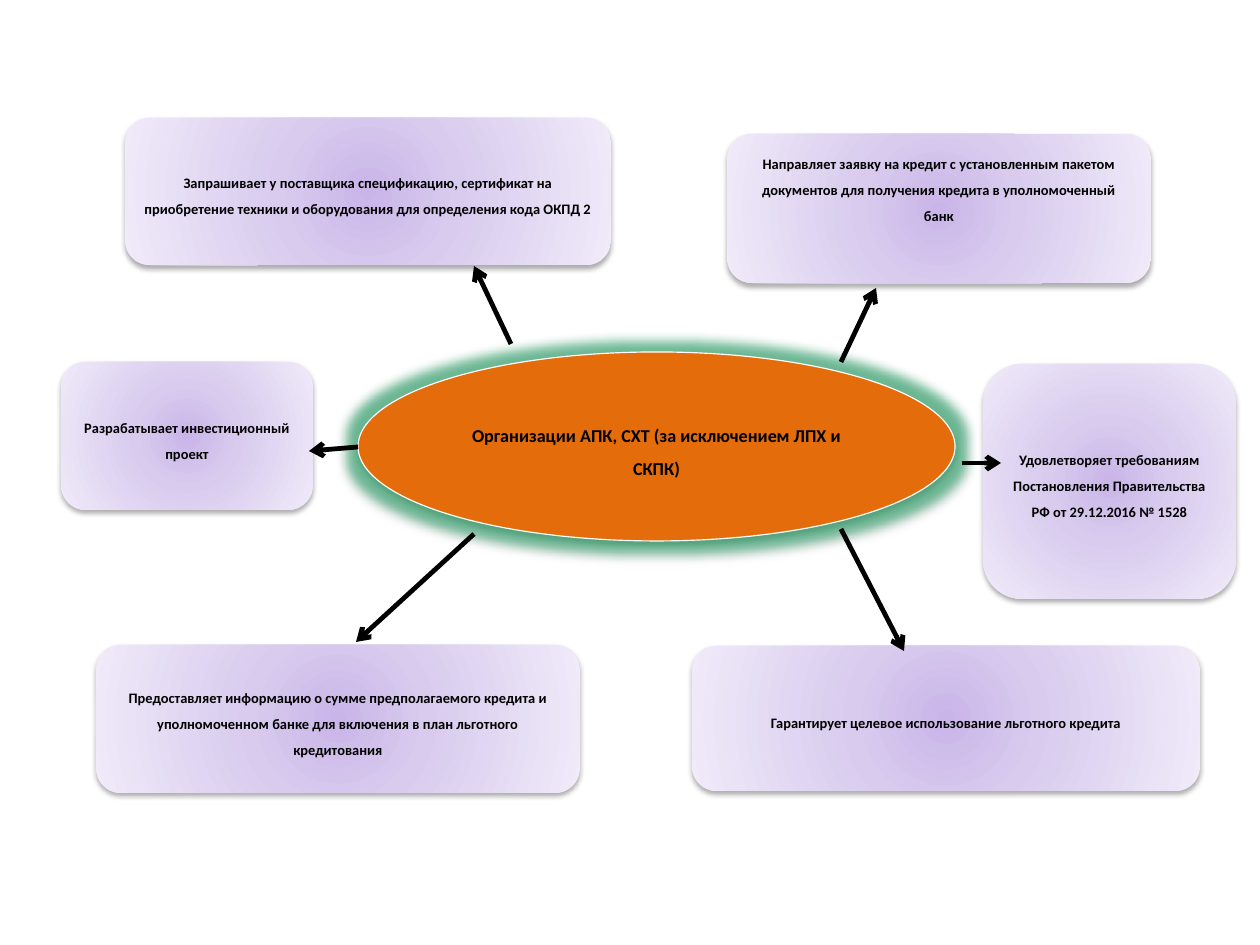
from lxml import etree
from pptx import Presentation
from pptx.dml.color import RGBColor
from pptx.enum.shapes import MSO_CONNECTOR, MSO_SHAPE
from pptx.enum.text import MSO_ANCHOR, PP_ALIGN
from pptx.oxml import parse_xml
from pptx.oxml.ns import qn
from pptx.util import Pt

ELLIPSE = MSO_SHAPE.OVAL
ROUNDED = MSO_SHAPE.ROUNDED_RECTANGLE
STRAIGHT = MSO_CONNECTOR.STRAIGHT
CENTER = PP_ALIGN.CENTER
TOP = MSO_ANCHOR.TOP
MIDDLE = MSO_ANCHOR.MIDDLE

EMU_PER_PX = 8000
EMU_PER_PT = 12700
FONT = "Calibri"
BLACK = "000000"
WHITE = "FFFFFF"
ORANGE = "E46C0A"
GREEN = "009650"
LILAC_STOPS = [(0, "C9B5E8"), (35, "D8CBEE"), (100, "F0EAF9")]

CENTRE_TEXT = "Организации АПК, СХТ (за исключением ЛПХ и СКПК)"
STEPS = [
    ("Запрашивает у поставщика спецификацию, сертификат на приобретение техники "
     "и оборудования для определения кода ОКПД 2", (125, 118, 486, 147), MIDDLE),
    ("Предоставляет информацию о сумме предполагаемого кредита и уполномоченном "
     "банке для включения в план льготного кредитования", (96, 645, 484, 148), MIDDLE),
    ("Гарантирует целевое использование льготного кредита",
     (692, 646, 508, 145), MIDDLE),
    ("Направляет заявку на кредит с установленным пакетом документов для "
     "получения кредита в уполномоченный банк", (727, 134, 424, 149), TOP),
    ("Разрабатывает инвестиционный проект", (61, 362, 252, 148), MIDDLE),
    ("Удовлетворяет требованиям Постановления Правительства РФ от 29.12.2016 № 1528",
     (983, 364, 253, 235), MIDDLE),
]
ARROWS = [
    ((474, 534), (356, 642)),
    ((841, 529), (904, 651)),
    ((358, 447), (309, 451)),
    ((962, 463), (1001, 463)),
    ((511, 344), (474, 266)),
    ((841, 362), (876, 288)),
]


def px(*lengths):
    return [length * EMU_PER_PX for length in lengths]


def rgb(value):
    return RGBColor.from_string(value)


def add_effect(shape, kind, color, alpha, **attributes):
    effects = shape._element.spPr.find(qn("a:effectLst"))
    effect = etree.SubElement(effects, qn(f"a:{kind}"))
    for name, value in attributes.items():
        effect.set(name, str(value))
    tint = etree.SubElement(effect, qn("a:srgbClr"), val=color)
    etree.SubElement(tint, qn("a:alpha"), val=str(alpha * 1000))


def add_drop_shadow(shape):
    add_effect(shape, "outerShdw", BLACK, 32, blurRad=int(3.5 * EMU_PER_PT),
               dist=int(2.2 * EMU_PER_PT), dir=5400000, rotWithShape=0)


def fill_radial(shape, stops):
    gradient = parse_xml(
        '<a:gradFill xmlns:a="http://schemas.openxmlformats.org/drawingml/2006/main" '
        'rotWithShape="1"><a:gsLst/><a:path path="circle">'
        '<a:fillToRect l="50000" t="50000" r="50000" b="50000"/></a:path></a:gradFill>')
    for position, color in stops:
        stop = etree.SubElement(gradient[0], qn("a:gs"), pos=str(position * 1000))
        etree.SubElement(stop, qn("a:srgbClr"), val=color)
    shape._element.spPr.find(qn("a:prstGeom")).addnext(gradient)


def set_label(shape, text, size, anchor):
    frame = shape.text_frame
    frame.word_wrap = True
    frame.vertical_anchor = anchor
    frame.text = text
    paragraph = frame.paragraphs[0]
    paragraph.alignment = CENTER
    paragraph.line_spacing = 1.5
    font = paragraph.runs[0].font
    font.name = FONT
    font.size = Pt(size)
    font.bold = True
    font.color.rgb = rgb(BLACK)


def add_centre(slide):
    centre = slide.shapes.add_shape(ELLIPSE, *px(358, 352, 597, 189))
    centre.shadow.inherit = False
    centre.fill.solid()
    centre.fill.fore_color.rgb = rgb(ORANGE)
    centre.line.color.rgb = rgb(WHITE)
    centre.line.width = Pt(0.75)
    add_effect(centre, "glow", GREEN, 50, rad=14 * EMU_PER_PT)
    add_drop_shadow(centre)
    set_label(centre, CENTRE_TEXT, 11.4, MIDDLE)


def add_step(slide, text, box, anchor):
    step = slide.shapes.add_shape(ROUNDED, *px(*box))
    step.shadow.inherit = False
    step.line.fill.background()
    fill_radial(step, LILAC_STOPS)
    add_drop_shadow(step)
    set_label(step, text, 9.1, anchor)


def add_arrow(slide, start, end):
    arrow = slide.shapes.add_connector(STRAIGHT, *px(*start, *end))
    arrow.line.color.rgb = rgb(BLACK)
    arrow.line.width = Pt(3)
    etree.SubElement(arrow.line._get_or_add_ln(), qn("a:tailEnd"), type="arrow")
    etree.SubElement(arrow._element.spPr, qn("a:effectLst"))


def main():
    deck = Presentation()
    deck.slide_width, deck.slide_height = px(1260, 945)
    slide = deck.slides.add_slide(deck.slide_layouts[6])
    add_centre(slide)
    for text, box, anchor in STEPS:
        add_step(slide, text, box, anchor)
    for start, end in ARROWS:
        add_arrow(slide, start, end)
    deck.save("out.pptx")


if __name__ == "__main__":
    main()
